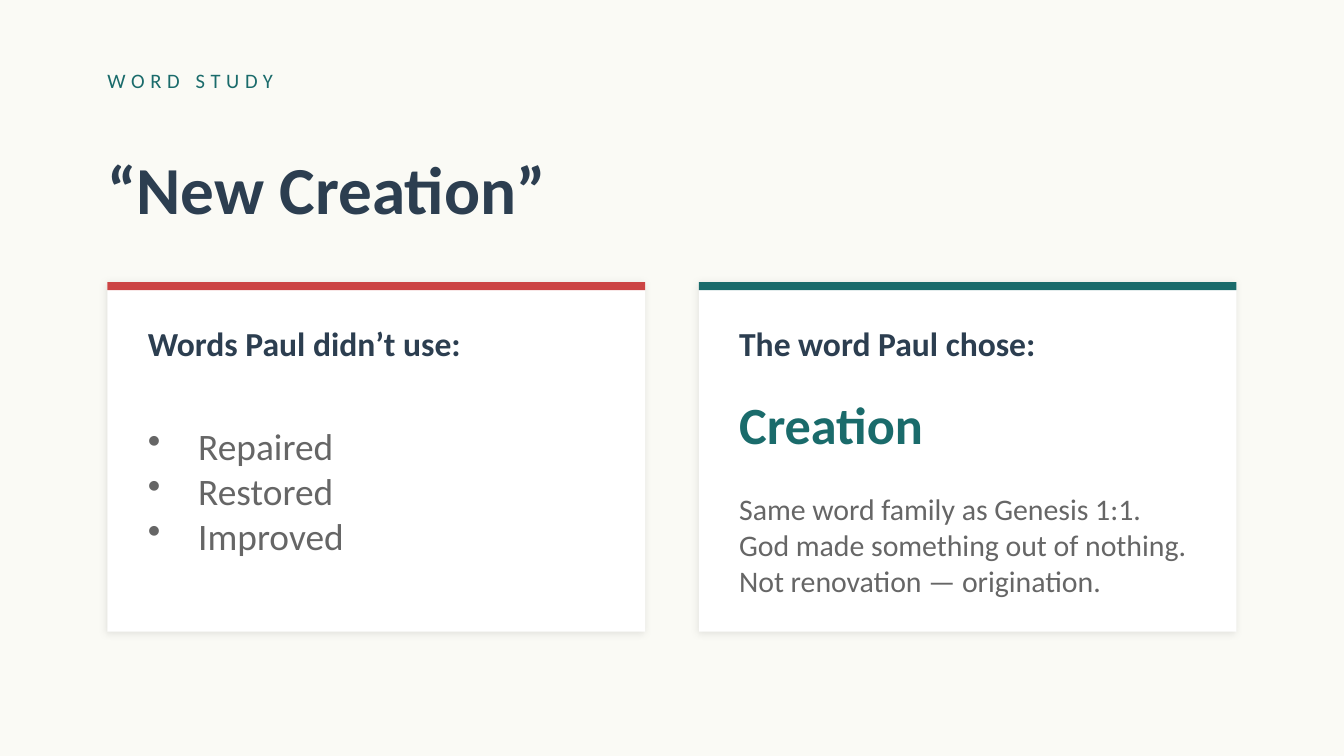
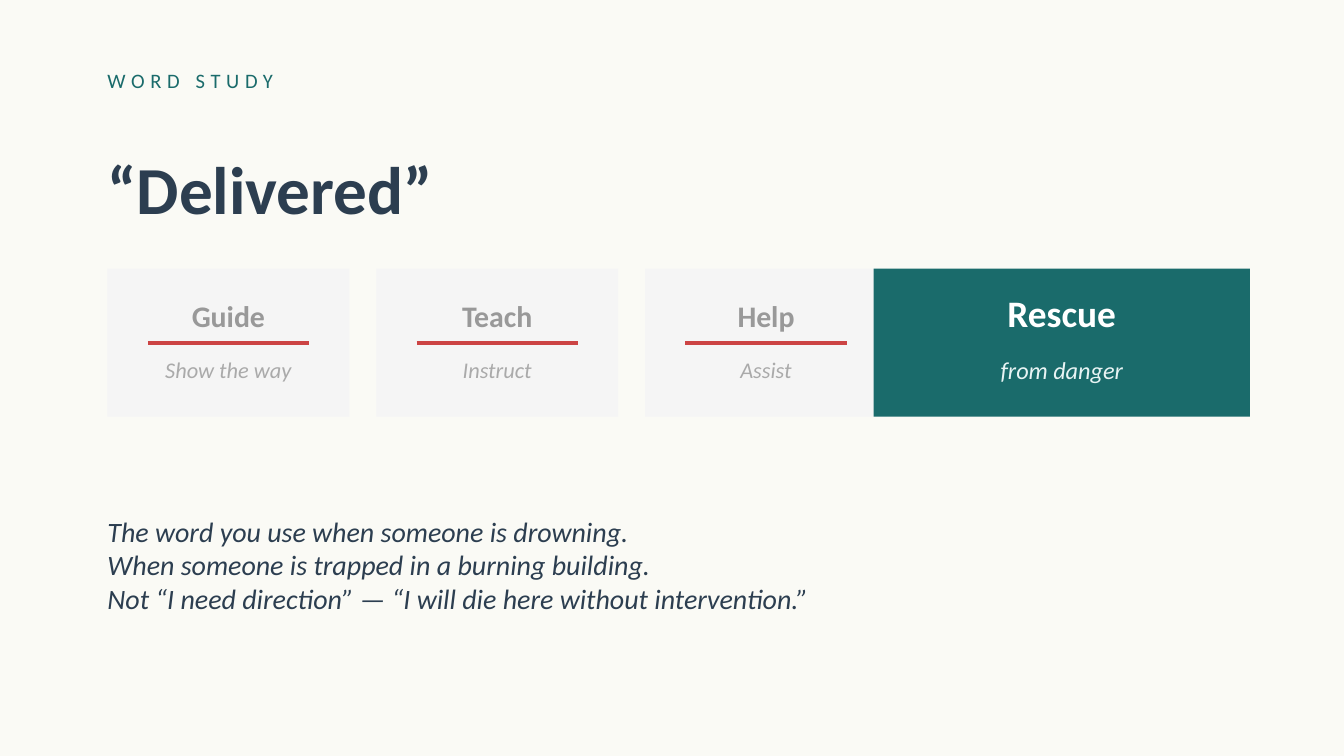
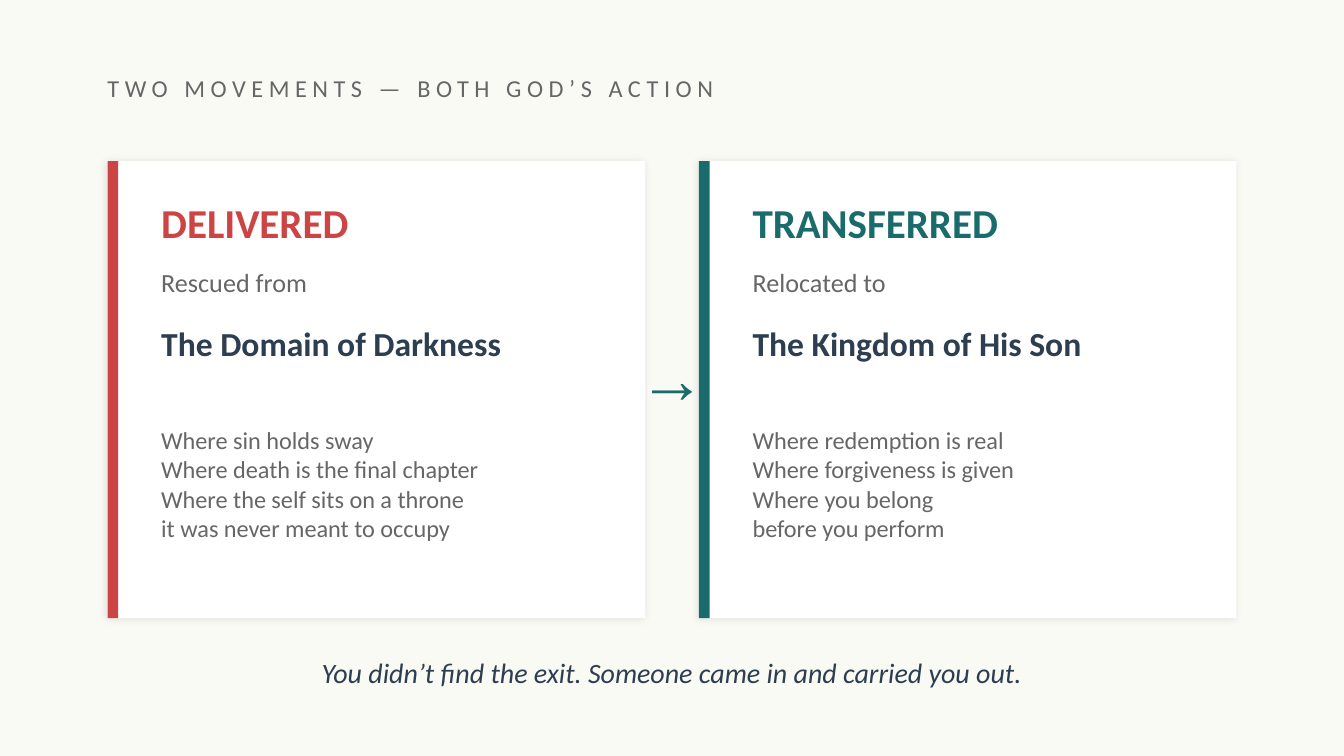
from lxml.etree import SubElement
from pptx import Presentation
from pptx.dml.color import RGBColor
from pptx.enum.shapes import MSO_CONNECTOR as CONNECTOR, MSO_SHAPE as SHAPE
from pptx.enum.text import MSO_ANCHOR as ANCHOR, PP_ALIGN as ALIGN
from pptx.oxml.ns import qn
from pptx.util import Inches, Pt

CREAM = RGBColor(0xFA, 0xFA, 0xF5)
WHITE = RGBColor(0xFF, 0xFF, 0xFF)
NAVY = RGBColor(0x2C, 0x3E, 0x50)
TEAL = RGBColor(0x1A, 0x6B, 0x6B)
MIST = RGBColor(0xE8, 0xF4, 0xF4)
RED = RGBColor(0xCC, 0x44, 0x44)
GRAY = RGBColor(0x66, 0x66, 0x66)
MUTED = RGBColor(0x99, 0x99, 0x99)
FAINT = RGBColor(0xAA, 0xAA, 0xAA)
PALE = RGBColor(0xF5, 0xF5, 0xF5)

MARGIN = 0.8
CONTENT_WIDTH = 8.4
CARD_WIDTH = 4
CARD_LEFTS = (MARGIN, 5.2)


class StudyDeck:
    """Hold the shared style and the current page of a word-study deck."""

    def __init__(self):
        self.deck = Presentation()
        self.deck.slide_width = Inches(10)
        self.deck.slide_height = Inches(10) * 9 // 16
        self.page = None

    def add_page(self):
        self.page = self.deck.slides.add_slide(self.deck.slide_layouts[6])
        self.page.background.fill.solid()
        self.page.background.fill.fore_color.rgb = CREAM

    def text(self, words, left, top, width, height, size, color, bold=False, italic=False,
             align=None, font="Calibri", spacing=0, bullets=False):
        box = self.page.shapes.add_textbox(Inches(left), Inches(top), Inches(width), Inches(height))
        frame = box.text_frame
        frame.word_wrap = True
        frame.vertical_anchor = ANCHOR.MIDDLE
        frame.margin_left = frame.margin_top = frame.margin_right = frame.margin_bottom = 0
        frame.text = words
        for para in frame.paragraphs:
            if align is not None:
                para.alignment = align
            if bullets:
                self.bullet(para)
            for span in para.runs:
                span.font.name = font
                span.font.size = Pt(size)
                span.font.color.rgb = color
                span.font.bold = bold
                span.font.italic = italic
                if spacing:
                    span.font._element.set("spc", str(spacing * 100))

    def bullet(self, para):
        properties = para._p.get_or_add_pPr()
        properties.set("marL", str(Pt(27)))
        properties.set("indent", str(-Pt(27)))
        SubElement(properties, qn("a:buSzPct"), val="100000")
        SubElement(properties, qn("a:buChar"), char="•")

    def rectangle(self, left, top, width, height, color):
        shape = self.page.shapes.add_shape(
            SHAPE.RECTANGLE, Inches(left), Inches(top), Inches(width), Inches(height))
        shape.shadow.inherit = False
        shape.fill.solid()
        shape.fill.fore_color.rgb = color
        shape.line.fill.background()
        return shape

    def card(self, left, top, height):
        shape = self.rectangle(left, top, CARD_WIDTH, height, WHITE)
        effects = shape._element.spPr.find(qn("a:effectLst"))
        shadow = SubElement(effects, qn("a:outerShdw"), blurRad=str(Pt(4)), dist=str(Pt(1)),
                            dir=str(135 * 60000), algn="bl", rotWithShape="0")
        tint = SubElement(shadow, qn("a:srgbClr"), val="000000")
        SubElement(tint, qn("a:alpha"), val="10000")

    def rule(self, left, top, width, color):
        line = self.page.shapes.add_connector(
            CONNECTOR.STRAIGHT, Inches(left), Inches(top), Inches(left + width), Inches(top))
        line.line.color.rgb = color
        line.line.width = Pt(2)
        SubElement(line._element.spPr, qn("a:effectLst"))

    def heading(self, title):
        self.text("WORD STUDY", MARGIN, 0.4, CONTENT_WIDTH, 0.4, 11, TEAL, spacing=3)
        self.text(title, MARGIN, 1, CONTENT_WIDTH, 0.8, 36, NAVY, bold=True)

    def word_card(self, left, accent, label):
        self.card(left, 2.1, 2.6)
        self.rectangle(left, 2.1, CARD_WIDTH, 0.06, accent)
        self.text(label, left + 0.3, 2.3, 3.6, 0.5, 18, NAVY, bold=True)

    def rejected_word(self, left, word, meaning):
        self.rectangle(left, 2, 1.8, 1.1, PALE)
        self.text(word, left, 2.1, 1.8, 0.5, 16, MUTED, bold=True, align=ALIGN.CENTER)
        self.text(meaning, left, 2.55, 1.8, 0.4, 12, FAINT, italic=True, align=ALIGN.CENTER)
        self.rule(left + 0.3, 2.55, 1.2, RED)

    def movement_card(self, left, accent, action, relation, realm, details):
        self.card(left, 1.2, 3.4)
        self.rectangle(left, 1.2, 0.08, 3.4, accent)
        inner = left + 0.4
        self.text(action, inner, 1.4, 3.4, 0.5, 22, accent, bold=True)
        self.text(relation, inner, 1.9, 3.4, 0.4, 14, GRAY)
        self.text(realm, inner, 2.3, 3.4, 0.5, 18, NAVY, bold=True)
        self.text(details, inner, 2.9, 3.4, 1.4, 13, GRAY)


def new_creation(study):
    study.add_page()
    study.heading("“New Creation”")
    unused, chosen = CARD_LEFTS
    study.word_card(unused, RED, "Words Paul didn’t use:")
    study.text("Repaired\nRestored\nImproved", unused + 0.3, 2.85, 3.6, 1.6, 20, GRAY, bullets=True)
    study.word_card(chosen, TEAL, "The word Paul chose:")
    study.text("Creation", chosen + 0.3, 2.85, 3.6, 0.6, 28, TEAL, bold=True)
    study.text("Same word family as Genesis 1:1.\n"
               "God made something out of nothing.\n"
               "Not renovation — origination.", chosen + 0.3, 3.5, 3.4, 1.1, 16, GRAY)


def delivered(study):
    study.add_page()
    study.heading("“Delivered”")
    rejected = (("Guide", "Show the way"), ("Teach", "Instruct"), ("Help", "Assist"))
    for column, (word, meaning) in enumerate(rejected):
        study.rejected_word(MARGIN + 2 * column, word, meaning)
    study.rectangle(6.5, 2, 2.8, 1.1, TEAL)
    study.text("Rescue", 6.5, 2.05, 2.8, 0.55, 20, WHITE, bold=True, align=ALIGN.CENTER)
    study.text("from danger", 6.5, 2.55, 2.8, 0.4, 13, MIST, italic=True, align=ALIGN.CENTER)
    study.text("The word you use when someone is drowning.\n"
               "When someone is trapped in a burning building.\n"
               "Not “I need direction” — “I will die here without intervention.”",
               MARGIN, 3.6, CONTENT_WIDTH, 1.2, 15, NAVY, italic=True)


def two_movements(study):
    study.add_page()
    study.text("TWO MOVEMENTS — BOTH GOD’S ACTION", MARGIN, 0.4, CONTENT_WIDTH, 0.5, 13, GRAY, spacing=3)
    origin, destination = CARD_LEFTS
    study.movement_card(origin, RED, "DELIVERED", "Rescued from", "The Domain of Darkness",
                        "Where sin holds sway\nWhere death is the final chapter\n"
                        "Where the self sits on a throne\nit was never meant to occupy")
    study.text("→", 4.6, 2.4, 0.8, 0.8, 36, TEAL, align=ALIGN.CENTER, font="Arial")
    study.movement_card(destination, TEAL, "TRANSFERRED", "Relocated to", "The Kingdom of His Son",
                        "Where redemption is real\nWhere forgiveness is given\n"
                        "Where you belong\nbefore you perform")
    study.text("You didn’t find the exit. Someone came in and carried you out.",
               MARGIN, 4.8, CONTENT_WIDTH, 0.4, 15, NAVY, italic=True, align=ALIGN.CENTER)


def main():
    study = StudyDeck()
    new_creation(study)
    delivered(study)
    two_movements(study)
    study.deck.save("out.pptx")


if __name__ == "__main__":
    main()
